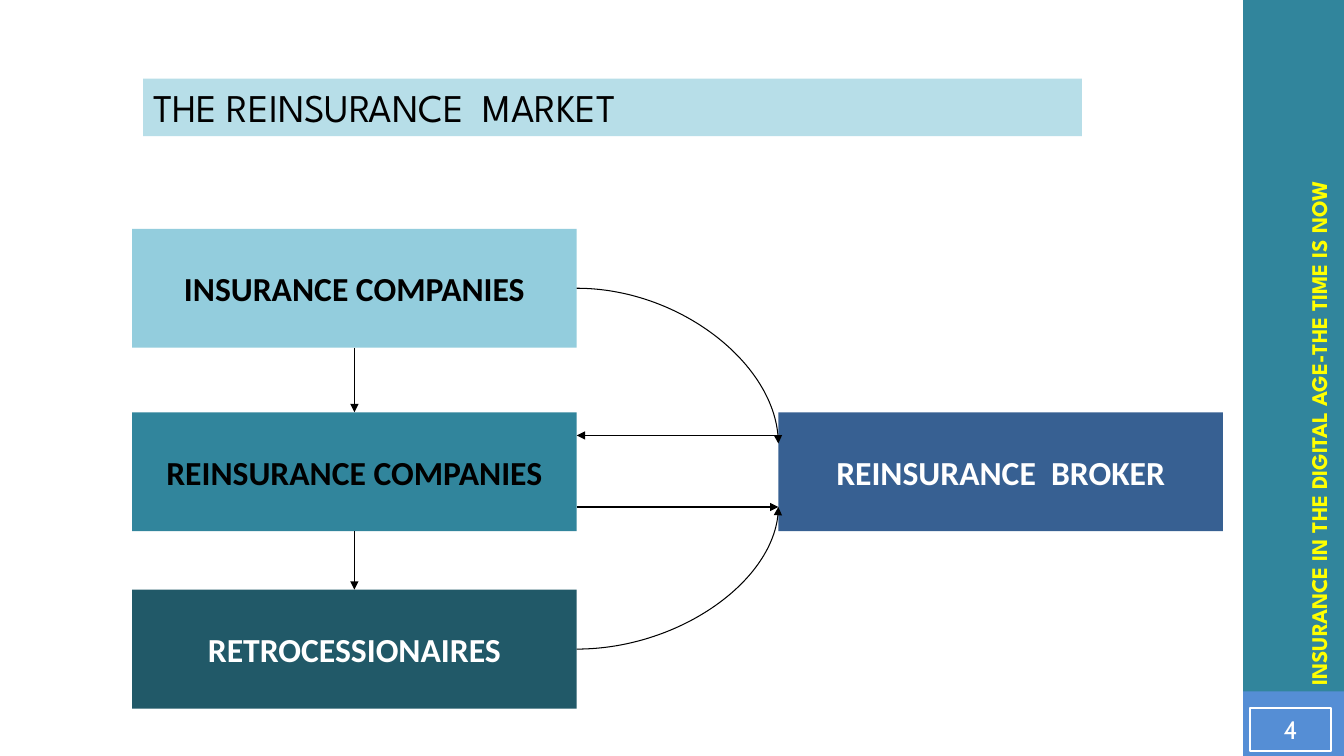
import dataclasses

import lxml.etree
import pptx
import pptx.dml.color
import pptx.enum.shapes
import pptx.enum.text
import pptx.oxml.ns
import pptx.util

PX = 9144  # EMU per px, 100 px to the inch
ALIGN = pptx.enum.text.PP_ALIGN
ANCHOR = pptx.enum.text.MSO_ANCHOR
CONNECTOR = pptx.enum.shapes.MSO_CONNECTOR
BOTTOM, TOP = 2, 0


@dataclasses.dataclass(frozen=True)
class Theme:
    black: str = "000000"
    white: str = "FFFFFF"
    yellow: str = "FFFF00"
    band: str = "B7DEE8"
    light: str = "93CDDD"
    teal: str = "31859C"
    dark: str = "215968"
    navy: str = "376092"
    blue: str = "558ED5"
    heading_font: str = "League Spartan"
    box_font: str = "Calibri"
    number_font: str = "Cabin"
    title_size: int = 28
    box_size: int = 24
    number_size: int = 18
    motto_size: int = 16
    line_width: float = 0.75
    frame_width: float = 1.5


THEME = Theme()


def px(*values):
    return [pptx.util.Emu(v * PX) for v in values]


def rgb(value):
    return pptx.dml.color.RGBColor.from_string(value)


def write(sp, text, *, font, size, color, bold=False, align=ALIGN.LEFT,
          anchor=ANCHOR.TOP, wrap=True, inset=None):
    tf = sp.text_frame
    tf.auto_size = pptx.enum.text.MSO_AUTO_SIZE.NONE
    tf.word_wrap = wrap
    tf.vertical_anchor = anchor
    if inset is not None:
        tf.margin_left = tf.margin_top = inset
        tf.margin_right = tf.margin_bottom = inset
    p = tf.paragraphs[0]
    p.alignment = align
    r = p.add_run()
    r.text = text
    r.font.name = font
    r.font.size = pptx.util.Pt(size)
    r.font.bold = bold
    r.font.color.rgb = rgb(color)


def paint(sp, fill):
    sp.fill.solid()
    sp.fill.fore_color.rgb = rgb(fill)


def add_rect(s, x, y, w, h, fill=None, line=None):
    sp = s.shapes.add_shape(pptx.enum.shapes.MSO_SHAPE.RECTANGLE, *px(x, y, w, h))
    sp.shadow.inherit = False
    if fill:
        paint(sp, fill)
    else:
        sp.fill.background()
    if line:
        sp.line.color.rgb = rgb(line)
        sp.line.width = pptx.util.Pt(THEME.frame_width)
    else:
        sp.line.fill.background()
    return sp


def add_party(s, text, x, y, fill, color):
    sp = add_rect(s, x, y, 441, 118, fill)
    write(sp, text, font=THEME.box_font, size=THEME.box_size, color=color,
          bold=True, align=ALIGN.CENTER, anchor=ANCHOR.MIDDLE, wrap=False)
    return sp


def add_arrow(s, start, end, kind=CONNECTOR.STRAIGHT):
    """Draw an arrow pointing at end; a curve leaves level and arrives upright."""
    cxn = s.shapes.add_connector(kind, *px(*start, *end))
    cxn.line.color.rgb = rgb(THEME.black)
    cxn.line.width = pptx.util.Pt(THEME.line_width)
    sp_pr = cxn._element.spPr
    qn = pptx.oxml.ns.qn
    if kind == CONNECTOR.CURVE:
        sp_pr.find(qn("a:prstGeom")).set("prst", "curvedConnector2")
    lxml.etree.SubElement(sp_pr.find(qn("a:ln")), qn("a:tailEnd"), type="triangle")
    lxml.etree.SubElement(sp_pr, qn("a:effectLst"))
    return cxn


def add_sidebar(s):
    add_rect(s, 1233, 0, 100, 750, THEME.teal)
    add_rect(s, 1233, 686, 100, 64, THEME.blue)
    motto = s.shapes.add_textbox(*px(953, 317, 709, 37))
    motto.rotation = 270
    write(motto, "INSURANCE IN THE DIGITAL AGE-THE TIME IS NOW",
          font=THEME.heading_font, size=THEME.motto_size, color=THEME.yellow, bold=True)
    number = add_rect(s, 1240, 702, 80, 43, line=THEME.white)
    write(number, "4", font=THEME.number_font, size=THEME.number_size,
          color=THEME.white, align=ALIGN.CENTER, anchor=ANCHOR.MIDDLE, inset=0)


def add_title(s, text):
    title = s.shapes.title
    title.left, title.top, title.width, title.height = px(142, 78, 931, 57)
    paint(title, THEME.band)
    write(title, text, font=THEME.heading_font, size=THEME.title_size, color=THEME.black)


def add_market(s):
    chain = [add_party(s, text, 131, y, fill, color) for text, y, fill, color in (
        ("INSURANCE COMPANIES", 227, THEME.light, THEME.black),
        ("REINSURANCE COMPANIES", 409, THEME.teal, THEME.black),
        ("RETROCESSIONAIRES", 585, THEME.dark, THEME.white),
    )]
    add_party(s, "REINSURANCE  BROKER", 772, 409, THEME.navy, THEME.white)
    for upper, lower in zip(chain, chain[1:]):
        cxn = add_arrow(s, (352, 345), (352, 409))
        cxn.begin_connect(upper, BOTTOM)
        cxn.end_connect(lower, TOP)
    left, right = 572, 772
    add_arrow(s, (right, 432), (left, 432))
    add_arrow(s, (left, 503), (right, 503))
    add_arrow(s, (left, 644), (right, 503), CONNECTOR.CURVE)
    add_arrow(s, (left, 286), (right, 440), CONNECTOR.CURVE)


def main():
    prs = pptx.Presentation()
    prs.slide_width, prs.slide_height = px(1333, 750)
    s = prs.slides.add_slide(prs.slide_layouts.get_by_name("Title Only"))
    add_sidebar(s)
    add_title(s, "THE REINSURANCE  MARKET")
    add_market(s)
    prs.save("out.pptx")


if __name__ == "__main__":
    main()
